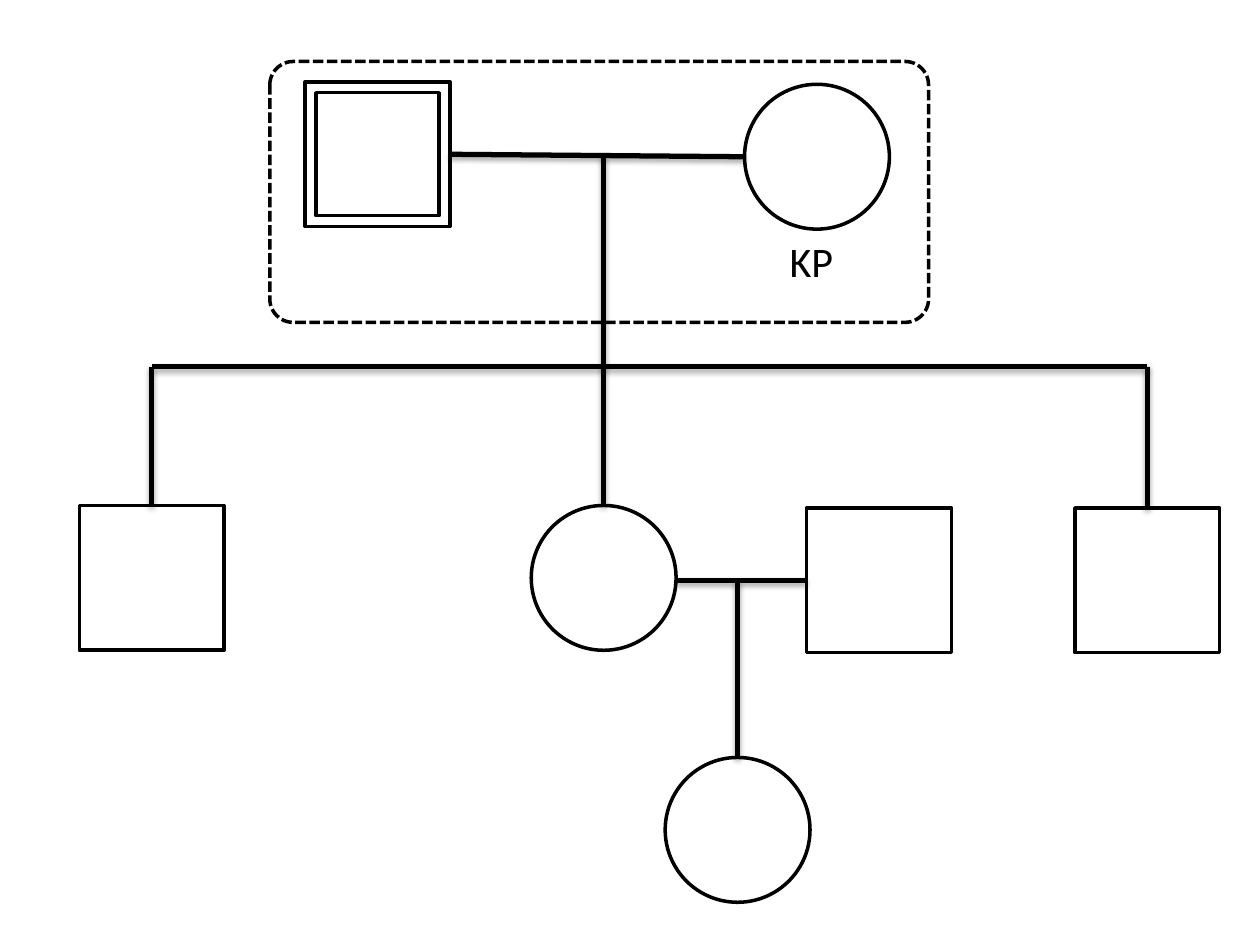
"""Draw a three-generation family tree on one slide."""
from dataclasses import dataclass
from typing import Optional

from lxml import etree
from pptx import Presentation
from pptx import util as u
from pptx.dml.color import RGBColor
from pptx.enum import dml, shapes, text
from pptx.oxml.ns import qn

BLACK, WHITE = "000000", "FFFFFF"
BOX, DISC = shapes.MSO_SHAPE.RECTANGLE, shapes.MSO_SHAPE.OVAL
SIZE = 2.92
HALF = SIZE / 2
INSET = 0.22
TOP, LEFT, RIGHT = 0, 1, 3


@dataclass
class Node:
    kind: int
    x: float
    y: float
    wide: float = SIZE
    high: float = SIZE
    fill: Optional[str] = WHITE

    @property
    def mid(self) -> float:
        return self.x + self.wide / 2


@dataclass
class Link:
    x1: float
    y1: float
    x2: float
    y2: float
    start: Optional[tuple] = None
    end: Optional[tuple] = None


def paint(color, code: str) -> None:
    color.rgb = RGBColor.from_string(code)


def shade(line) -> None:
    fx = etree.SubElement(line._element.spPr, qn("a:effectLst"))
    glow = etree.SubElement(fx, qn("a:outerShdw"), blurRad=str(u.Pt(3.1)),
                            dist=str(u.Pt(1.8)), dir="5400000", rotWithShape="0")
    tint = etree.SubElement(glow, qn("a:srgbClr"), val=BLACK)
    etree.SubElement(tint, qn("a:alpha"), val="35000")


def draw_node(slide, node: Node):
    shape = slide.shapes.add_shape(node.kind, u.Cm(node.x), u.Cm(node.y),
                                   u.Cm(node.wide), u.Cm(node.high))
    shape.shadow.inherit = False
    if node.fill:
        shape.fill.solid()
        paint(shape.fill.fore_color, node.fill)
    else:
        shape.fill.background()
    paint(shape.line.color, BLACK)
    shape.line.width = u.Pt(2)
    return shape


def draw_link(slide, link: Link) -> None:
    line = slide.shapes.add_connector(
        shapes.MSO_CONNECTOR.STRAIGHT,
        *map(u.Cm, (link.x1, link.y1, link.x2, link.y2)))
    paint(line.line.color, BLACK)
    line.line.width = u.Pt(3)
    shade(line)
    if link.start:
        line.begin_connect(*link.start)
    if link.end:
        line.end_connect(*link.end)


def draw_name(slide, name: str, x: float, y: float) -> None:
    box = slide.shapes.add_textbox(u.Cm(x), u.Cm(y), u.Cm(1.47), u.Cm(1.27))
    frame = box.text_frame
    frame.word_wrap = False
    frame.auto_size = text.MSO_AUTO_SIZE.SHAPE_TO_FIT_TEXT
    run = frame.paragraphs[0].add_run()
    run.text = name
    run.font.name, run.font.size = "Calibri", u.Pt(24)
    paint(run.font.color, BLACK)


def main() -> None:
    deck = Presentation()
    deck.slide_width, deck.slide_height = u.Cm(25.4), u.Cm(19.05)
    slide = deck.slides.add_slide(deck.slide_layouts[6])

    tree = {
        "wife": Node(DISC, 15.01, 1.7, fill=None),
        "father": Node(BOX, 6.15, 1.65),
        "inner": Node(BOX, 6.15 + INSET, 1.65 + INSET,
                      SIZE - 2 * INSET, SIZE - 2 * INSET),
        "daughter": Node(DISC, 10.71, 10.19),
        "son": Node(BOX, 1.6, 10.19),
        "brother": Node(BOX, 21.67, 10.24),
        "husband": Node(BOX, 16.26, 10.24),
        "grandchild": Node(DISC, 13.41, 15.27),
    }
    drawn = {key: draw_node(slide, node) for key, node in tree.items()}
    draw_name(slide, "KP", 15.67, 4.62)

    dad, wife, spouse = tree["father"], tree["wife"], tree["husband"]
    girl, child = tree["daughter"], tree["grandchild"]
    bar, pair = 7.39, spouse.y + HALF
    links = [
        Link(dad.x + SIZE, dad.y + HALF, wife.x, wife.y + HALF,
             start=(drawn["father"], RIGHT)),
        Link(girl.mid, dad.y + HALF, girl.mid, bar),
        Link(tree["son"].mid, bar, tree["brother"].mid, bar),
        Link(girl.x + SIZE, pair, spouse.x, pair, end=(drawn["husband"], LEFT)),
        Link(child.mid, pair, child.mid, child.y, end=(drawn["grandchild"], TOP)),
    ]
    for key in ("son", "daughter", "brother"):
        kid = tree[key]
        links.append(Link(kid.mid, bar, kid.mid, kid.y, end=(drawn[key], TOP)))
    for link in links:
        draw_link(slide, link)

    home = draw_node(slide, Node(shapes.MSO_SHAPE.ROUNDED_RECTANGLE,
                                 5.44, 1.24, 13.28, 5.26, None))
    home.adjustments[0] = 0.09
    home.line.dash_style = dml.MSO_LINE.SQUARE_DOT
    deck.save("out.pptx")


if __name__ == "__main__":
    main()
